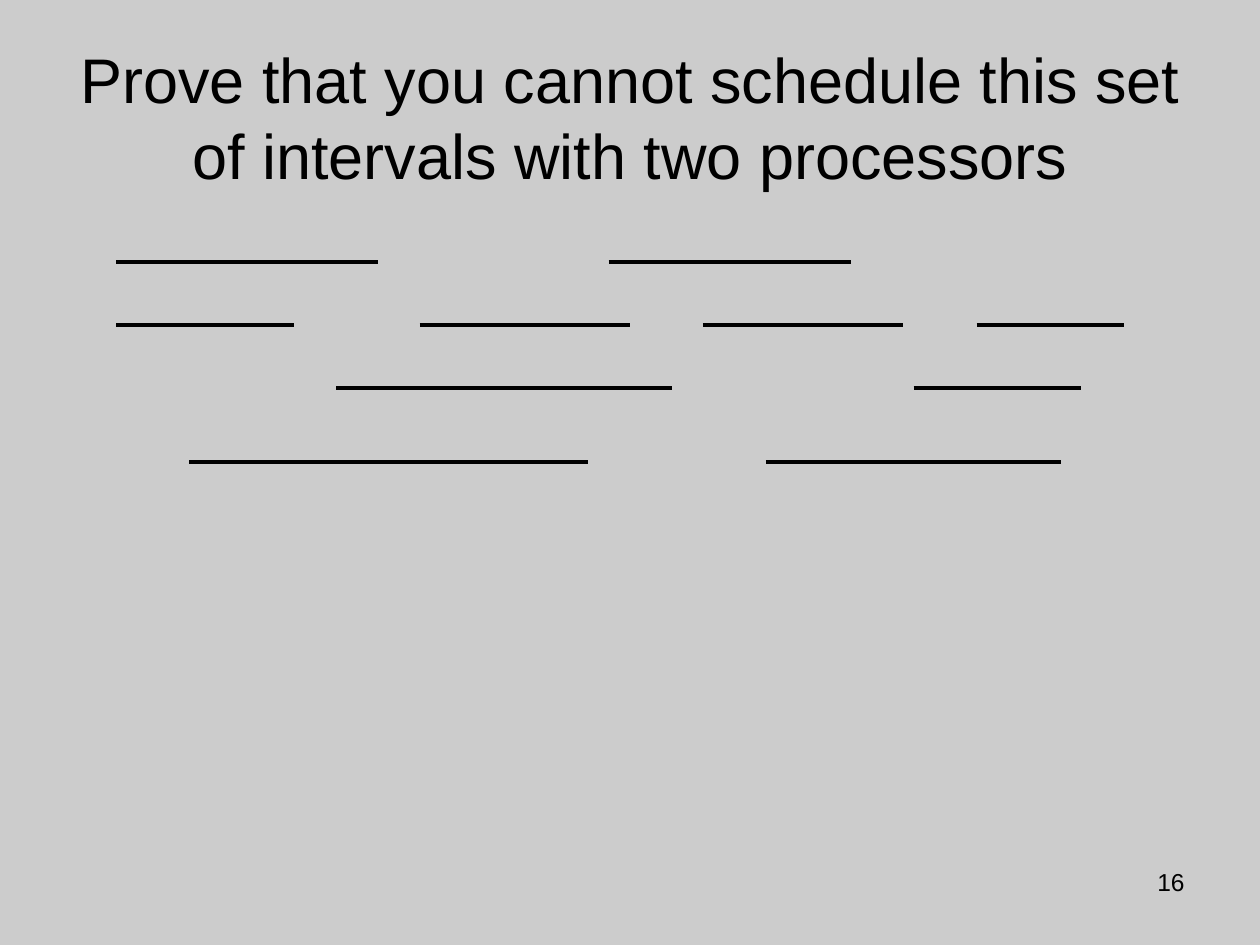
import pptx
import pptx.dml.color
import pptx.enum.shapes
import pptx.enum.text
import pptx.oxml.ns
import pptx.util
import lxml.etree

Cm = pptx.util.Cm
ALIGN = pptx.enum.text.PP_ALIGN
ANCHOR = pptx.enum.text.MSO_ANCHOR

INK = "000000"
BACKGROUND = "CCCCCC"

INTERVAL_ROWS = [
    (5.28, [(2.34, 7.62), (12.27, 17.15)]),
    (6.55, [(2.34, 5.92), (8.46, 12.7), (14.17, 18.21), (19.69, 22.66)]),
    (7.82, [(6.78, 13.54), (18.42, 21.79)]),
    (9.32, [(3.81, 11.86), (15.44, 21.39)]),
]


def color(hex_code):
    return pptx.dml.color.RGBColor.from_string(hex_code)


def add_text(slide, text, left, top, width, height, size, align, anchor):
    box = slide.shapes.add_textbox(Cm(left), Cm(top), Cm(width), Cm(height))
    frame = box.text_frame
    frame.word_wrap = True
    frame.vertical_anchor = anchor
    frame.text = text
    paragraph = frame.paragraphs[0]
    paragraph.alignment = align
    font = paragraph.runs[0].font
    font.name = "Arial"
    font.size = pptx.util.Pt(size)
    font.color.rgb = color(INK)


def add_interval(slide, start, end, height):
    interval = slide.shapes.add_connector(
        pptx.enum.shapes.MSO_CONNECTOR.STRAIGHT,
        Cm(start), Cm(height), Cm(end), Cm(height),
    )
    interval.line.color.rgb = color(INK)
    interval.line.width = pptx.util.Pt(2.25)
    properties = interval._element.spPr
    lxml.etree.SubElement(properties, pptx.oxml.ns.qn("a:effectLst"))


def main():
    deck = pptx.Presentation()
    deck.slide_width = Cm(25.4)
    deck.slide_height = Cm(19.05)
    slide = deck.slides.add_slide(deck.slide_layouts[6])
    slide.background.fill.solid()
    slide.background.fill.fore_color.rgb = color(BACKGROUND)

    add_text(
        slide,
        "Prove that you cannot schedule this set of intervals with two processors",
        1.27, 0.76, 22.86, 3.18, 36, ALIGN.CENTER, ANCHOR.MIDDLE,
    )
    for height, intervals in INTERVAL_ROWS:
        for start, end in intervals:
            add_interval(slide, start, end, height)
    add_text(slide, "16", 18.21, 17.35, 5.92, 1.32, 14, ALIGN.RIGHT, ANCHOR.TOP)

    deck.save("out.pptx")


if __name__ == "__main__":
    main()
